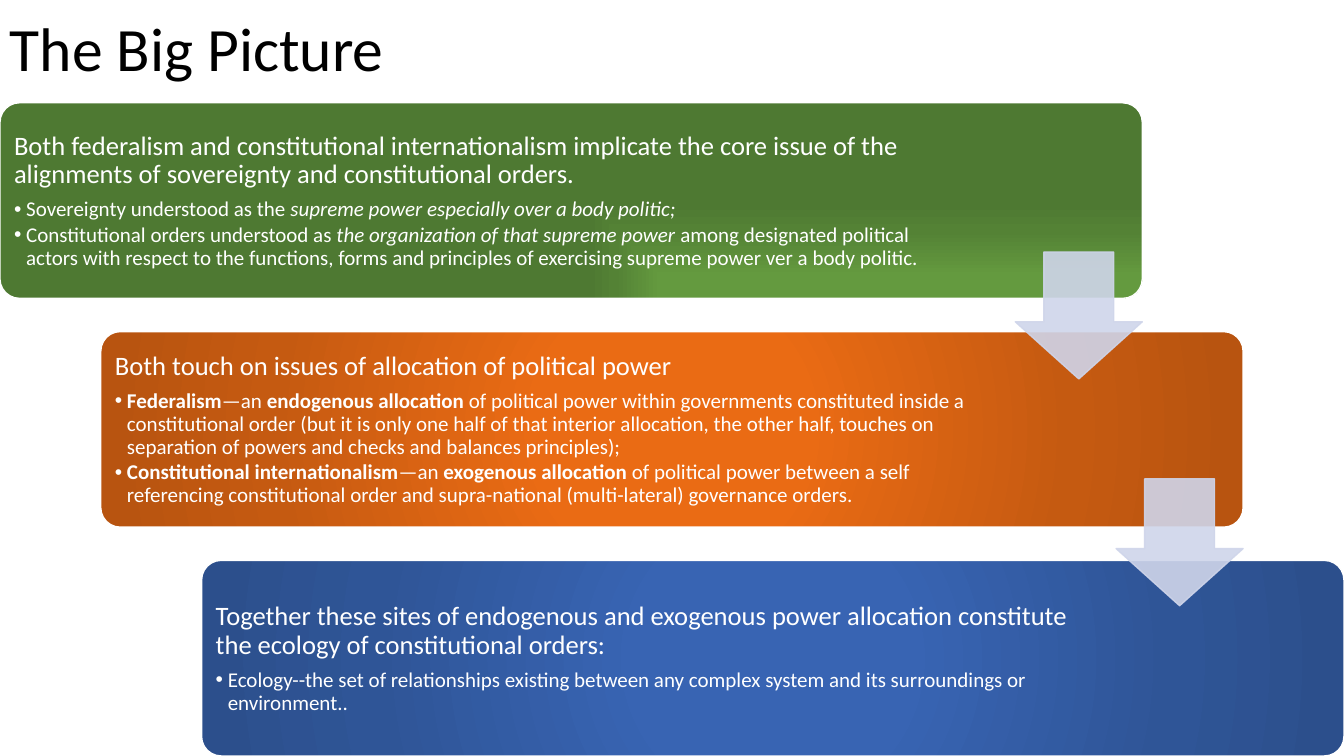
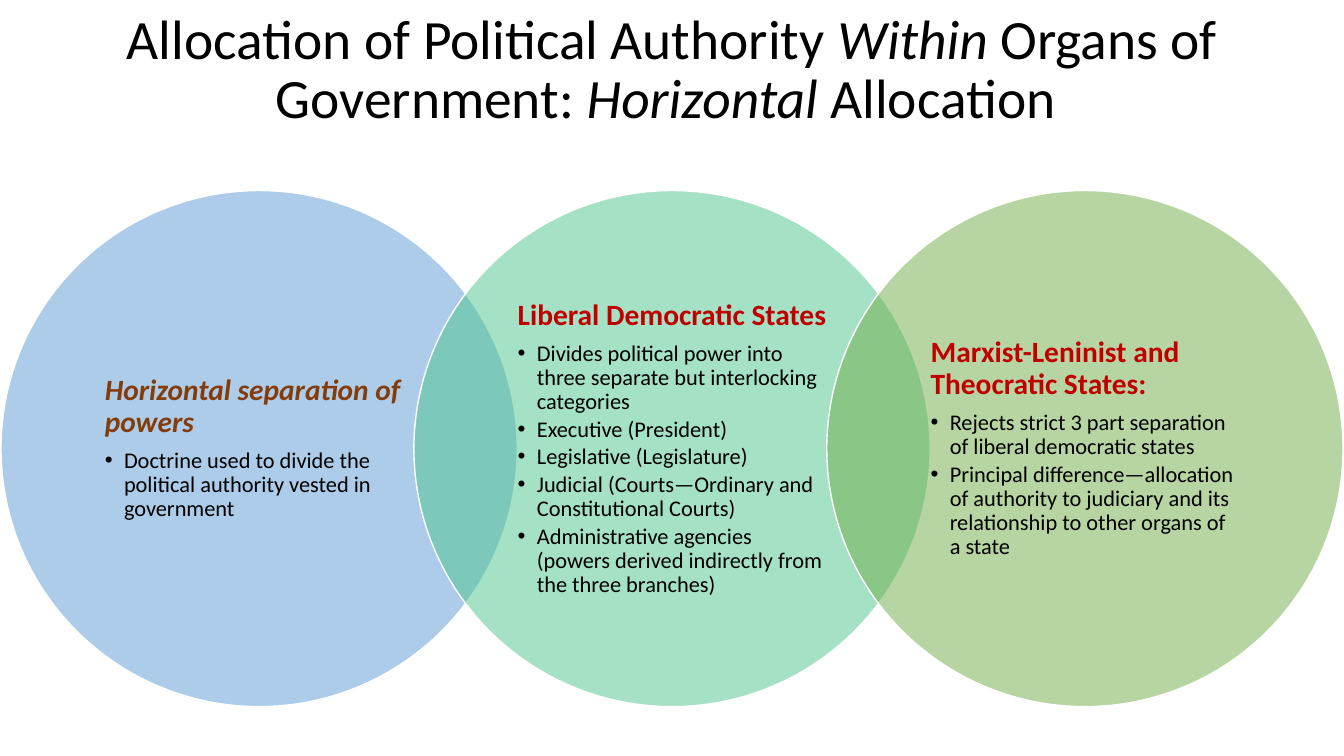
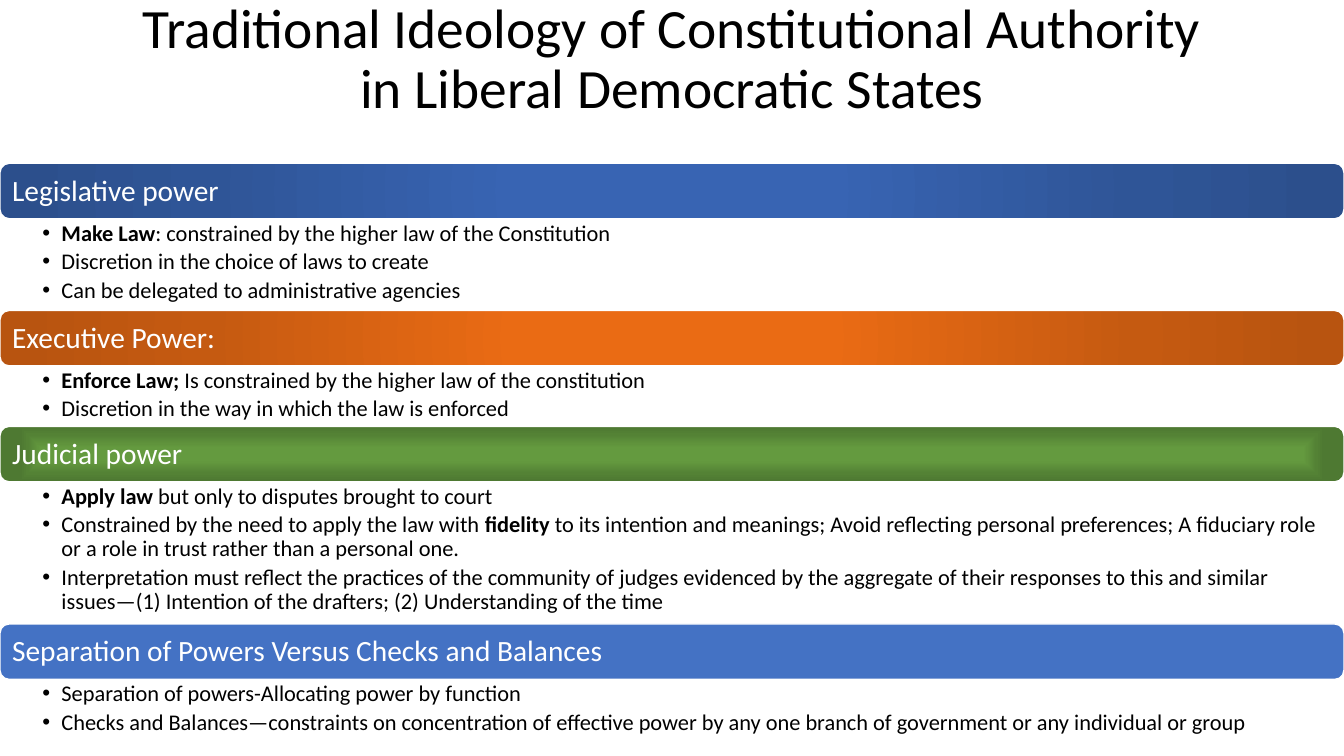
"""Build three slides on the allocation of political authority."""
from dataclasses import dataclass, replace

import lxml.etree
import pptx
import pptx.dml.color
import pptx.enum.shapes
import pptx.enum.text
import pptx.oxml
import pptx.oxml.ns
import pptx.util

Inches = pptx.util.Inches
Shapes = pptx.enum.shapes.MSO_SHAPE
Anchor = pptx.enum.text.MSO_ANCHOR
Align = pptx.enum.text.PP_ALIGN
qn = pptx.oxml.ns.qn


@dataclass(frozen=True)
class TextStyle:
    size: float
    color: str
    after: float = 0
    indent: float = 0
    bold: bool = False
    italic: bool = False
    align: Align = Align.LEFT


@dataclass(frozen=True)
class Gradient:
    inner: str
    middle: str
    outer: str
    shading: str = "circle"
    focus: tuple = (50, 50, 50, 50)


@dataclass(frozen=True)
class Run:
    text: str
    bold: bool = False
    italic: bool = False


class Theme:
    font = "Calibri"
    width, height = 13.33, 7.5
    white, black = "FFFFFF", "000000"
    arrow = "CFD5EA"
    plain_blue = "4472C4"
    circles = ("5B9BD5", "4DC58D", "70AD47")
    blue = Gradient("3864B3", "2F5597", "2C4F8C")
    orange = Gradient("EA6B14", "C55A11", "B85410")
    green = Gradient("649A3F", "548235", "4E7932", "shape")
    green_corner = replace(green, shading="rect", focus=(100, 100, 0, 0))
    title_left = TextStyle(44, black)
    title_center = TextStyle(39.6, black, align=Align.CENTER)
    step_heading = TextStyle(19, white, 0.35)
    step_bullet = TextStyle(15, white, 0.15, 0.12)
    circle_heading = TextStyle(21, "C00000", 0.35, bold=True)
    circle_topic = replace(circle_heading, color="843C0B", italic=True)
    circle_bullet = TextStyle(16, black, 0.15, 0.19)
    band_heading = TextStyle(21, white, 0.35)
    band_bullet = TextStyle(16, black, 0.2, 0.19)


def bold(text):
    return Run(text, bold=True)


def italic(text):
    return Run(text, italic=True)


def rgb(color):
    return pptx.dml.color.RGBColor.from_string(color)


class Deck:
    def __init__(self, theme):
        self.theme = theme
        self.presentation = pptx.Presentation()
        self.presentation.slide_width = Inches(theme.width)
        self.presentation.slide_height = Inches(theme.height)
        self.slide = None

    def new_slide(self):
        layout = self.presentation.slide_layouts[6]
        self.slide = self.presentation.slides.add_slide(layout)

    def shape(self, kind, box, fill, line=None, opacity=100, line_opacity=100, adjustments=()):
        shape = self.slide.shapes.add_shape(kind, *map(Inches, box))
        shape.shadow.inherit = False
        for index, value in enumerate(adjustments):
            shape.adjustments[index] = value
        shape.line.width = pptx.util.Pt(1)
        if isinstance(fill, Gradient):
            self.gradient(shape, fill)
        else:
            self.solid(shape.fill, fill, opacity)
        self.solid(shape.line.fill, line or self.theme.white, line_opacity)

    def solid(self, fill, color, opacity):
        fill.solid()
        fill.fore_color.rgb = rgb(color)
        if opacity < 100:
            element = fill._xPr.find(qn("a:solidFill")).find(qn("a:srgbClr"))
            alpha = lxml.etree.SubElement(element, qn("a:alpha"))
            alpha.set("val", str(opacity * 1000))

    def gradient(self, shape, gradient):
        shape.fill.gradient()
        element = shape._element.spPr.find(qn("a:gradFill"))
        for child in list(element):
            element.remove(child)
        stops = lxml.etree.SubElement(element, qn("a:gsLst"))
        colors = (gradient.inner, gradient.inner, gradient.middle, gradient.outer)
        for position, color in zip((0, 23, 69, 97), colors):
            stop = lxml.etree.SubElement(stops, qn("a:gs"), pos=str(position * 1000))
            lxml.etree.SubElement(stop, qn("a:srgbClr"), val=color)
        shading = lxml.etree.SubElement(element, qn("a:path"))
        shading.set("path", gradient.shading)
        focus = lxml.etree.SubElement(shading, qn("a:fillToRect"))
        for side, value in zip("ltrb", gradient.focus):
            focus.set(side, str(value * 1000))

    def text(self, box, paragraphs, insets=(0.1, 0.05, 0.1, 0.05), anchor=Anchor.MIDDLE):
        frame = self.slide.shapes.add_textbox(*map(Inches, box)).text_frame
        frame.word_wrap = True
        frame.vertical_anchor = anchor
        frame.margin_left, frame.margin_top, frame.margin_right, frame.margin_bottom = map(Inches, insets)
        for index, (style, pieces) in enumerate(paragraphs):
            paragraph = frame.add_paragraph() if index else frame.paragraphs[0]
            self.format(paragraph, style)
            self.fill_paragraph(paragraph, pieces)

    def format(self, paragraph, style):
        paragraph.alignment = style.align
        paragraph.line_spacing = 0.9
        paragraph.space_after = pptx.util.Pt(round(style.size * style.after, 1))
        if style.indent:
            paragraph.level = 1
            properties = paragraph._p.get_or_add_pPr()
            properties.set("marL", str(Inches(style.indent)))
            properties.set("indent", str(-Inches(style.indent)))
            lxml.etree.SubElement(properties, qn("a:buFont"), typeface="Arial")
            lxml.etree.SubElement(properties, qn("a:buChar"), char="•")
        font = paragraph.font
        font.name = self.theme.font
        font.size = pptx.util.Pt(style.size)
        font.color.rgb = rgb(style.color)
        font.bold = style.bold
        font.italic = style.italic

    def fill_paragraph(self, paragraph, pieces):
        for piece in (pieces,) if isinstance(pieces, str) else pieces:
            if piece == "\n":
                paragraph.add_line_break()
                continue
            piece = Run(piece) if isinstance(piece, str) else piece
            run = paragraph.add_run()
            run.text = piece.text
            if piece.bold:
                run.font.bold = True
            if piece.italic:
                run.font.italic = True

    def title(self, pieces, style, width, height):
        self.text((0, 0, width, height), [(style, pieces)])

    def step(self, index, fill, text_width, heading, bullets):
        left, top = index, 1.02 + 2.27 * index
        self.shape(Shapes.ROUNDED_RECTANGLE, (left, top, 11.33, 1.94), fill, adjustments=(0.1,))
        paragraphs = [(self.theme.step_heading, heading)]
        paragraphs += [(self.theme.step_bullet, bullet) for bullet in bullets]
        self.text((left + 0.06, top + 0.06, text_width, 1.83), paragraphs, (0.08,) * 4)

    def step_arrow(self, index):
        box = (10.07 + index, 2.5 + 2.25 * index, 1.26, 1.26)
        self.shape(Shapes.DOWN_ARROW, box, self.theme.arrow, self.theme.arrow, 90, 90, (0.55, 0.45))

    def circle(self, index, heading_style, heading, bullets):
        left, top, diameter, inset = 0.01 + 4.095 * index, 1.89, 5.12, 0.75
        self.shape(Shapes.OVAL, (left, top, diameter, diameter), self.theme.circles[index], opacity=50)
        side = diameter - 2 * inset
        paragraphs = [(heading_style, heading)]
        paragraphs += [(self.theme.circle_bullet, bullet) for bullet in bullets]
        self.text((left + inset, top + inset, side, side), paragraphs, (0.28, 0.03, 0.28, 0.03))

    def band(self, top, fill, heading, bullets, body_height):
        width, height = self.theme.width, 0.55
        self.shape(Shapes.ROUNDED_RECTANGLE, (0, top, width, height), fill)
        heading_box = (0.03, top + 0.03, width - 0.06, height - 0.05)
        self.text(heading_box, [(self.theme.band_heading, heading)], (0.09,) * 4)
        paragraphs = [(self.theme.band_bullet, bullet) for bullet in bullets]
        body_box = (0, top + height, width, body_height)
        self.text(body_box, paragraphs, (0.42, 0.03, 0.16, 0.03), Anchor.TOP)
        return top + height + body_height


def big_picture(deck):
    theme = deck.theme
    deck.new_slide()
    deck.title("The Big Picture", theme.title_left, 4.49, 1.02)
    steps = [
        (theme.green_corner, 9.24,
         "Both federalism and constitutional internationalism implicate the core issue of the "
         "alignments of sovereignty and constitutional orders.",
         [("Sovereignty understood as the ", italic("supreme power especially over a body politic;")),
          ("Constitutional orders understood as ", italic("the organization of that supreme power "),
           "among designated political actors with respect to the functions, forms and principles "
           "of exercising supreme power ver a body politic.")]),
        (theme.orange, 8.96, "Both touch on issues of allocation of political power",
         [(bold("Federalism"), "—an ", bold("endogenous allocation "),
           "of political power within governments constituted inside a constitutional order (but it "
           "is only one half of that interior allocation, the other half, touches on separation of "
           "powers and checks and balances principles);"),
          (bold("Constitutional internationalism"), "—an ", bold("exogenous allocation "),
           "of political power between a self referencing constitutional order and supra-national "
           "(multi-lateral) governance orders.")]),
        (theme.blue, 8.96,
         "Together these sites of endogenous and exogenous power allocation constitute the ecology "
         "of constitutional orders:",
         ["Ecology--the set of relationships existing between any complex system and its "
          "surroundings or environment.."]),
    ]
    for index, step in enumerate(steps):
        deck.step(index, *step)
    for index in range(len(steps) - 1):
        deck.step_arrow(index)


def horizontal_allocation(deck):
    theme = deck.theme
    deck.new_slide()
    deck.title(("Allocation of Political Authority ", italic("Within"), " Organs of Government: ",
                italic("Horizontal"), " Allocation "), theme.title_center, theme.width, 1.41)
    circles = [
        (theme.circle_topic, "Horizontal separation of powers",
         ["Doctrine used to divide the political authority vested in government"]),
        (theme.circle_heading, "Liberal Democratic States",
         ["Divides political power into three separate but interlocking categories",
          "Executive (President)",
          "Legislative (Legislature)",
          "Judicial (Courts—Ordinary and Constitutional Courts)",
          "Administrative agencies (powers derived indirectly from the three branches)"]),
        (theme.circle_heading, "Marxist-Leninist and Theocratic States:",
         ["Rejects strict 3 part separation of liberal democratic states",
          "Principal difference—allocation of authority to judiciary and its relationship to other "
          "organs of a state"]),
    ]
    for index, circle in enumerate(circles):
        deck.circle(index, *circle)


def traditional_ideology(deck):
    theme = deck.theme
    deck.new_slide()
    deck.title(("Traditional Ideology of Constitutional Authority", "\n", "in Liberal Democratic States"),
               theme.title_center, theme.width, 1.2)
    bands = [
        (theme.blue, "Legislative power",
         [(bold("Make Law"), ": constrained by the higher law of the Constitution"),
          "Discretion in the choice of laws to create",
          "Can be delegated to administrative agencies"], 0.91),
        (theme.orange, "Executive Power:",
         [(bold("Enforce Law; "), "Is constrained by the higher law of the constitution"),
          "Discretion in the way in which the law is enforced"], 0.6),
        (theme.green, "Judicial power",
         [(bold("Apply law "), "but only to disputes brought to court"),
          ("Constrained by the need to apply the law with ", bold("fidelity"),
           " to its intention and meanings; Avoid reflecting personal preferences; A fiduciary role "
           "or a role in trust rather than a personal one."),
          "Interpretation must reflect the practices of the community of judges evidenced by the "
          "aggregate of their responses to this and similar issues—(1) Intention of the drafters; "
          "(2) Understanding of the time"], 1.41),
        (theme.plain_blue, "Separation of Powers Versus Checks and Balances",
         ["Separation of powers-Allocating power by function",
          "Checks and Balances—constraints on concentration of effective power by any one branch of "
          "government or any individual or group"], 0.61),
    ]
    top = 1.62
    for band in bands:
        top = deck.band(top, *band)


def main():
    deck = Deck(Theme())
    big_picture(deck)
    horizontal_allocation(deck)
    traditional_ideology(deck)
    deck.presentation.save("out.pptx")


if __name__ == "__main__":
    main()
